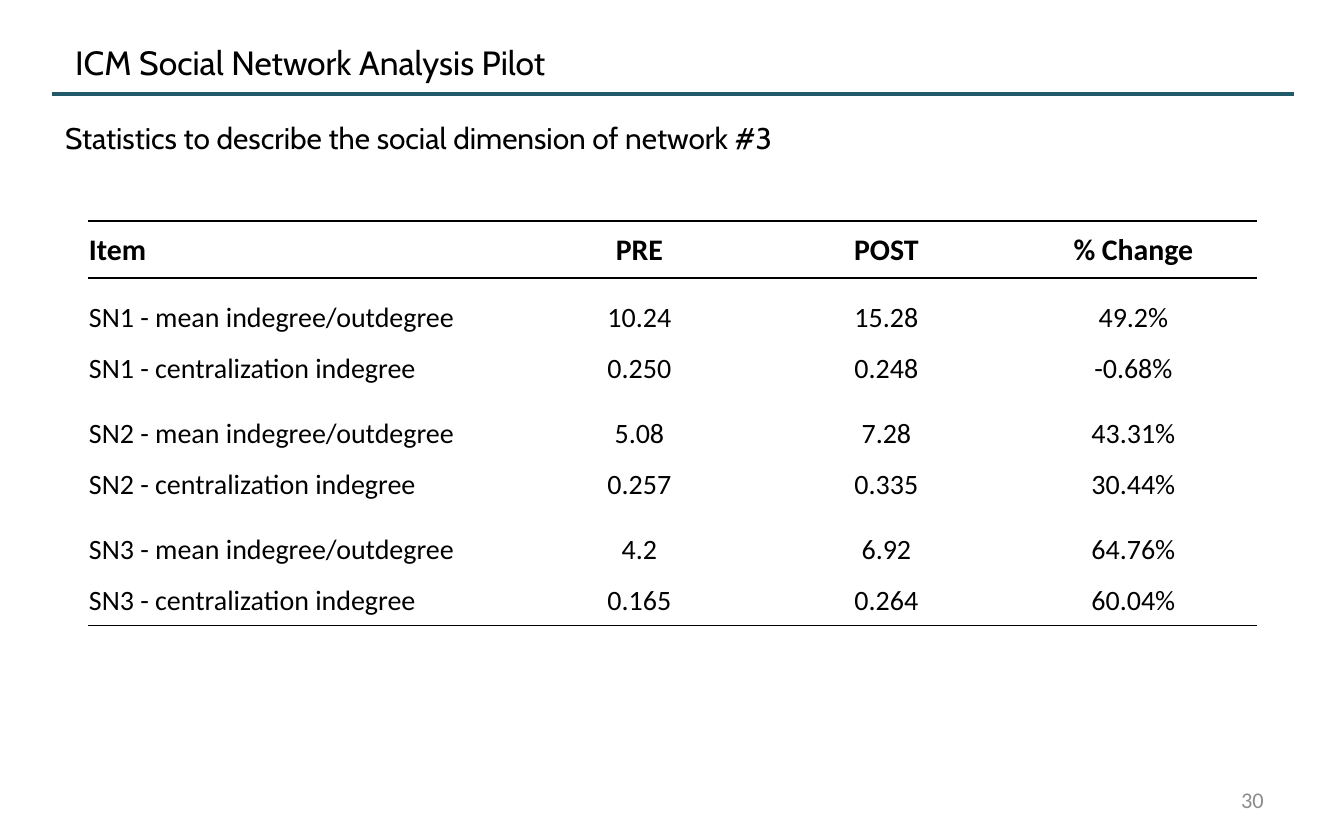
from lxml.etree import SubElement
from pptx import Presentation
from pptx.dml.color import RGBColor
from pptx.enum.shapes import MSO_CONNECTOR as Connector
from pptx.enum.text import MSO_ANCHOR as Anchor, PP_ALIGN as Align
from pptx.oxml.ns import qn
from pptx.util import Pt

TITLE = "ICM Social Network Analysis Pilot"
SUBTITLE = "Statistics to describe the social dimension of network #3"
PAGE_NUMBER = "30"
HEADER = ("Item", "PRE", "POST", "% Change")
GROUPS = [
    [("SN1 - mean indegree/outdegree", "10.24", "15.28", "49.2%"),
     ("SN1 - centralization indegree", "0.250", "0.248", "-0.68%")],
    [("SN2 - mean indegree/outdegree", "5.08", "7.28", "43.31%"),
     ("SN2 - centralization indegree", "0.257", "0.335", "30.44%")],
    [("SN3 - mean indegree/outdegree", "4.2", "6.92", "64.76%"),
     ("SN3 - centralization indegree", "0.165", "0.264", "60.04%")],
]
COLUMN_WIDTHS = (310, 90, 28, 247, 247, 247)
TEXT_COLUMNS = (0, 3, 4, 5)
HEADER_HEIGHT, ROW_HEIGHT, GAP_HEIGHT = 57, 51, 14
BLACK, TEAL, GRAY = "000000", "215968", "8C8C8C"
NO_STYLE = "{2D5ABB26-0587-4C30-8999-92F81FD0307C}"


def px(value):
    return round(value * 914400 / 134.4)


def color(value):
    return RGBColor.from_string(value)


def format_runs(paragraph, name, size, fill, bold=False):
    for run in paragraph.runs:
        run.font.name = name
        run.font.size = Pt(size)
        run.font.bold = bold
        run.font.color.rgb = color(fill)


def add_text(slide, text, box, name, size, fill, anchor, align=Align.LEFT):
    text_frame = slide.shapes.add_textbox(*map(px, box)).text_frame
    text_frame.word_wrap = True
    text_frame.vertical_anchor = anchor
    text_frame.text = text
    paragraph = text_frame.paragraphs[0]
    paragraph.alignment = align
    format_runs(paragraph, name, size, fill)


def add_border(cell, side, width):
    line = SubElement(cell._tc.get_or_add_tcPr(), qn(f"a:{side}"), w=str(Pt(width)))
    fill = SubElement(line, qn("a:solidFill"))
    SubElement(fill, qn("a:srgbClr"), val=BLACK)


def add_statistics(slide, left, top):
    rows = [HEADER]
    for group in GROUPS:
        rows += [None, *group]
    heights = [HEADER_HEIGHT] + [ROW_HEIGHT if row else GAP_HEIGHT for row in rows[1:]]
    frame = slide.shapes.add_table(len(rows), len(COLUMN_WIDTHS), px(left), px(top),
                                   px(sum(COLUMN_WIDTHS)), px(sum(heights)))
    table = frame.table
    table.first_row = table.horz_banding = False
    table._tbl.tblPr.find(qn("a:tableStyleId")).text = NO_STYLE
    for column, width in zip(table.columns, COLUMN_WIDTHS):
        column.width = px(width)
    for index, (values, height) in enumerate(zip(rows, heights)):
        table.rows[index].height = px(height)
        texts = dict(zip(TEXT_COLUMNS, values or ()))
        for number, cell in enumerate(table.rows[index].cells):
            cell.margin_left = cell.margin_right = cell.margin_top = px(1)
            cell.margin_bottom = 0
            cell.vertical_anchor = Anchor.MIDDLE
            if index == 0:
                add_border(cell, "lnT", 1)
            if index in (0, len(rows) - 1):
                add_border(cell, "lnB", 0.75)
            cell.fill.background()
            paragraph = cell.text_frame.paragraphs[0]
            if number in texts:
                paragraph.text = texts[number]
                paragraph.alignment = Align.CENTER if number else Align.LEFT
                format_runs(paragraph, "Calibri", 15 if index else 16, BLACK, index == 0)
            else:
                paragraph.font.size = Pt(1)
        if index:
            table.cell(index, 0).merge(table.cell(index, 1))


def main():
    presentation = Presentation()
    presentation.slide_width, presentation.slide_height = px(1344), px(840)
    slide = presentation.slides.add_slide(presentation.slide_layouts[6])

    rule = slide.shapes.add_connector(Connector.STRAIGHT, px(52), px(94), px(1294), px(94))
    rule.line.color.rgb = color(TEAL)
    rule.line.width = Pt(2)
    SubElement(rule._element.spPr, qn("a:effectLst"))

    add_text(slide, TITLE, (62, 32, 1046, 60), "Cabin", 18, BLACK, Anchor.MIDDLE)
    add_text(slide, PAGE_NUMBER, (964, 778, 313, 44), "Calibri", 12, GRAY,
             Anchor.MIDDLE, Align.RIGHT)
    add_text(slide, SUBTITLE, (52, 113, 1242, 638), "Cabin", 16, BLACK, Anchor.TOP)
    add_statistics(slide, 88, 221)
    presentation.save("out.pptx")


if __name__ == "__main__":
    main()
